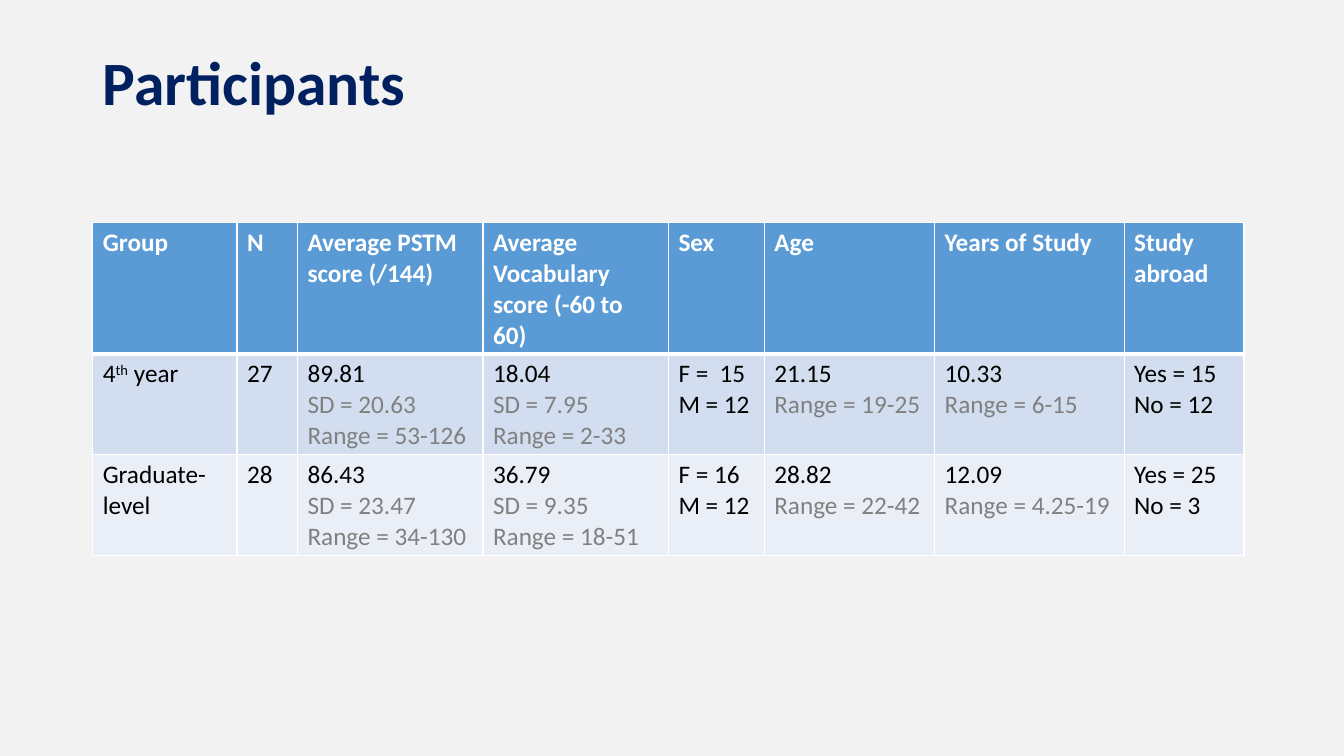
"""Build the Participants slide with its table of learner groups."""
from typing import NamedTuple

from lxml.etree import SubElement
from pptx import Presentation
from pptx.dml.color import RGBColor
from pptx.enum.text import MSO_ANCHOR as Anchor
from pptx.oxml.ns import qn
from pptx.util import Inches, Pt

FONT = "Calibri"
NAVY, WHITE, BLACK, GRAY = "002060", "FFFFFF", "000000", "808080"
COLUMN_WIDTHS = (1.43, 0.6, 1.84, 1.84, 0.95, 1.69, 1.88, 1.19)
ROW_HEIGHT = 0.87
DETAIL_PREFIXES = ("SD", "Range")


class TableRow(NamedTuple):
    fill: str
    color: str
    bold: bool
    top_border: float
    bottom_border: float
    entries: tuple[str, ...]


ROWS = (
    TableRow("5B9BD5", WHITE, True, 1, 3, (
        "Group", "N", "Average PSTM score (/144)",
        "Average Vocabulary score (-60 to 60)",
        "Sex", "Age", "Years of Study", "Study abroad")),
    TableRow("D2DEEF", BLACK, False, 3, 1, (
        "4^th^ year", "27", "89.81\nSD = 20.63\nRange = 53-126",
        "18.04\nSD = 7.95\nRange = 2-33", "F =  15\nM = 12",
        "21.15\nRange = 19-25", "10.33\nRange = 6-15", "Yes = 15\nNo = 12")),
    TableRow("EAEFF7", BLACK, False, 1, 1, (
        "Graduate-level", "28", "86.43\nSD = 23.47\nRange = 34-130",
        "36.79\nSD = 9.35\nRange = 18-51", "F = 16\nM = 12",
        "28.82\nRange = 22-42", "12.09\nRange = 4.25-19", "Yes = 25\nNo = 3")),
)


def rgb(value: str) -> RGBColor:
    """Turn a hex string into a colour."""
    return RGBColor.from_string(value)


def style_run(run, size: float, color: str, bold: bool) -> None:
    """Set the font of one run."""
    run.font.name = FONT
    run.font.size = Pt(size)
    run.font.bold = bold
    run.font.color.rgb = rgb(color)


def draw_borders(cell, row: TableRow) -> None:
    """Give a cell white borders of the widths its row calls for."""
    properties = cell._tc.get_or_add_tcPr()
    widths = {"lnL": 1, "lnR": 1, "lnT": row.top_border, "lnB": row.bottom_border}
    for side, width in widths.items():
        border = SubElement(properties, qn(f"a:{side}"), w=str(Pt(width)))
        SubElement(SubElement(border, qn("a:solidFill")), qn("a:srgbClr"), val=WHITE)


def fill_cell(cell, entry: str, row: TableRow) -> None:
    """Write an entry, with superscripts between carets and details in gray."""
    draw_borders(cell, row)
    cell.fill.solid()
    cell.fill.fore_color.rgb = rgb(row.fill)
    cell.text_frame.text = entry.replace("^", "")
    for paragraph, line in zip(cell.text_frame.paragraphs, entry.split("\n")):
        color = GRAY if line.startswith(DETAIL_PREFIXES) else row.color
        pieces = line.split("^")
        paragraph.runs[0].text = pieces[0]
        for piece in pieces[1:]:
            paragraph.add_run().text = piece
        for position, run in enumerate(paragraph.runs):
            style_run(run, 18, color, row.bold)
            if position % 2:
                run._r.get_or_add_rPr().set("baseline", "30000")


def add_title(slide, wording: str) -> None:
    """Add the slide heading."""
    heading = slide.shapes.add_textbox(
        Inches(0.92), Inches(0.4), Inches(11.5), Inches(0.89)).text_frame
    heading.word_wrap = True
    heading.vertical_anchor = Anchor.MIDDLE
    heading.text = wording
    heading.paragraphs[0].line_spacing = 0.9
    style_run(heading.paragraphs[0].runs[0], 44, NAVY, True)


def add_participants(slide) -> None:
    """Add the table of participant groups."""
    participants = slide.shapes.add_table(
        len(ROWS), len(COLUMN_WIDTHS), Inches(0.92), Inches(2.21),
        Inches(sum(COLUMN_WIDTHS)), Inches(ROW_HEIGHT * len(ROWS))).table
    for column, width in zip(participants.columns, COLUMN_WIDTHS):
        column.width = Inches(width)
    for table_row, row in zip(participants.rows, ROWS):
        for cell, entry in zip(table_row.cells, row.entries):
            fill_cell(cell, entry, row)


def main() -> None:
    """Build and save the presentation."""
    deck = Presentation()
    deck.slide_width, deck.slide_height = Inches(13.33), Inches(7.5)
    slide = deck.slides.add_slide(deck.slide_layouts[6])
    slide.background.fill.solid()
    slide.background.fill.fore_color.rgb = rgb("F2F2F2")
    add_title(slide, "Participants")
    add_participants(slide)
    deck.save("out.pptx")


if __name__ == "__main__":
    main()
